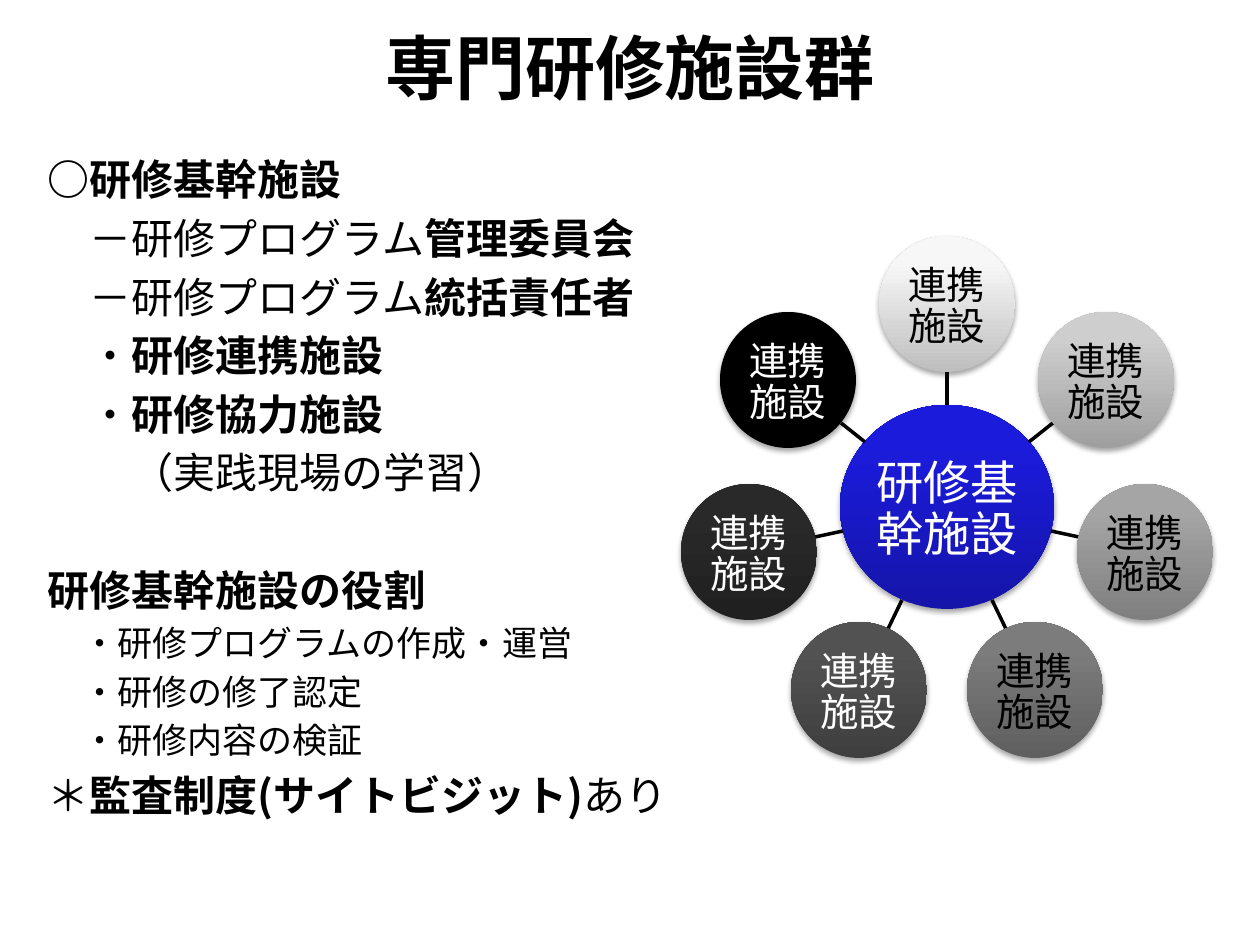
import math

from lxml import etree
from pptx import Presentation
from pptx.dml.color import RGBColor
from pptx.enum.shapes import MSO_CONNECTOR, MSO_SHAPE
from pptx.enum.text import MSO_ANCHOR, PP_ALIGN
from pptx.oxml.ns import qn
from pptx.util import Pt

PX = 914400 // 126
BLACK = RGBColor(0x00, 0x00, 0x00)
WHITE = RGBColor(0xFF, 0xFF, 0xFF)
HUB_DARK = RGBColor(0x15, 0x15, 0xA9)
HUB_LIGHT = RGBColor(0x1B, 0x1B, 0xDC)
CJK_FONT = "Noto Sans CJK JP"
SERIF_FONT = "Times New Roman"
ELLIPSE = MSO_SHAPE.OVAL
STRAIGHT = MSO_CONNECTOR.STRAIGHT
CENTER, LEFT = PP_ALIGN.CENTER, PP_ALIGN.LEFT
MIDDLE, TOP = MSO_ANCHOR.MIDDLE, MSO_ANCHOR.TOP


def write(paragraph, runs, size=24, font=CJK_FONT, color=BLACK, align=LEFT,
          pitch=None, before=0, indent=0):
    """Fill a paragraph with (text, bold) runs; indent is in px."""
    paragraph.alignment = align
    paragraph.space_before = Pt(before)
    if pitch:
        paragraph.line_spacing = Pt(pitch)
    if indent:
        paragraph._p.get_or_add_pPr().set("marL", str(indent * PX))
    for text, bold in runs:
        run = paragraph.add_run()
        run.text = text
        run.font.size, run.font.bold, run.font.name = Pt(size), bold, font
        run.font.color.rgb = color
        latin = run._r.rPr.find(qn("a:latin"))
        east_asian = etree.Element(qn("a:ea"), typeface=CJK_FONT)
        latin.addnext(east_asian)


def add_facility(cx, cy, width, height, dark, light, label, **text_format):
    """Add a shaded, shadowed circle centred on cx, cy with its label."""
    circle = slide.shapes.add_shape(
        ELLIPSE, round(cx - width / 2) * PX, round(cy - height / 2) * PX,
        width * PX, height * PX)
    circle.fill.gradient()
    circle.fill.gradient_angle = 90
    for stop, position, color in zip(circle.fill.gradient_stops, (0, 0.8), (dark, light)):
        stop.position, stop.color.rgb = position, color
    circle.line.fill.background()
    circle.shadow.inherit = False
    effects = circle._element.spPr.find(qn("a:effectLst"))
    shadow = etree.SubElement(effects, qn("a:outerShdw"), blurRad=str(Pt(3.1)),
                              dist=str(Pt(1.8)), dir="5400000", rotWithShape="0")
    shadow_color = etree.SubElement(shadow, qn("a:srgbClr"), val="000000")
    etree.SubElement(shadow_color, qn("a:alpha"), val="35000")
    frame = circle.text_frame
    frame.word_wrap, frame.vertical_anchor = True, MIDDLE
    frame.margin_left = frame.margin_right = frame.margin_bottom = 2 * PX
    frame.margin_top = 8 * PX
    write(frame.paragraphs[0], [(label, False)], font=SERIF_FONT, align=CENTER,
          **text_format)


prs = Presentation()
prs.slide_width, prs.slide_height = 1260 * PX, 945 * PX
slide = prs.slides.add_slide(prs.slide_layouts[5])

title = slide.shapes.title
title.left, title.top, title.width, title.height = 35 * PX, 16 * PX, 1190 * PX, 100 * PX
title.text_frame.vertical_anchor = MIDDLE
write(title.text_frame.paragraphs[0], [("専門研修施設群", True)], size=40, align=CENTER)

# Hub and the partner facilities spaced evenly around it, clockwise from the top
HUB_X, HUB_Y, HUB_W, HUB_H = 947, 507, 214, 204
ORBIT, PARTNER_SIZE = 203, 136
partners = [
    (0xBE, 0xF7, BLACK), (0x9F, 0xCE, BLACK), (0x7F, 0xA5, BLACK), (0x5F, 0x7C, BLACK),
    (0x3F, 0x52, WHITE), (0x20, 0x29, WHITE), (0x00, 0x00, WHITE),
]
add_facility(HUB_X, HUB_Y, HUB_W, HUB_H, HUB_DARK, HUB_LIGHT, "研修基幹施設",
             size=27, color=WHITE, pitch=29)
for index, (dark, light, text_color) in enumerate(partners):
    angle = 2 * math.pi * index / len(partners)
    dx, dy = math.sin(angle), -math.cos(angle)
    hub_edge = 1 / math.hypot(dx / (HUB_W / 2), dy / (HUB_H / 2))
    partner_edge = ORBIT - PARTNER_SIZE / 2
    ends = [round(center + reach * step) * PX
            for reach in (hub_edge, partner_edge)
            for center, step in ((HUB_X, dx), (HUB_Y, dy))]
    spoke = slide.shapes.add_connector(STRAIGHT, *ends)
    spoke.line.color.rgb, spoke.line.width = BLACK, Pt(2)
    etree.SubElement(spoke._element.spPr, qn("a:effectLst"))
    add_facility(HUB_X + ORBIT * dx, HUB_Y + ORBIT * dy, PARTNER_SIZE, PARTNER_SIZE,
                 RGBColor(dark, dark, dark), RGBColor(light, light, light), "連携施設",
                 size=22, color=text_color, pitch=23.4)

# Outline: runs, text size, indent in characters, space before
outline = [
    ([("○研修基幹施設", True)], 24, 0, 0),
    ([("－研修プログラム", False), ("管理委員会", True)], 24, 1, 4.8),
    ([("－研修プログラム", False), ("統括責任者", True)], 24, 1, 4.8),
    ([("・", False), ("研修連携施設", True)], 24, 1, 4.8),
    ([("・", False), ("研修協力施設", True)], 24, 1, 4.8),
    ([("（実践現場の学習）", False)], 24, 2, 4.8),
    ([("研修基幹施設の役割", True)], 24, 0, 38.3),
    ([("・研修プログラムの作成・運営", False)], 20, 1, 4),
    ([("・研修の修了認定", False)], 20, 1, 4),
    ([("・研修内容の検証", False)], 20, 1, 4),
    ([("＊", False), ("監査制度(サイトビジット)", True), ("あり", False)], 24, 0, 4.8),
]
body = slide.shapes.add_textbox(35 * PX, 148 * PX, 694 * PX, 760 * PX).text_frame
body.word_wrap, body.vertical_anchor = True, TOP
for number, (runs, size, indent, before) in enumerate(outline):
    paragraph = body.add_paragraph() if number else body.paragraphs[0]
    write(paragraph, runs, size=size, pitch=round(size * 1.195, 1), before=before,
          indent=round(indent * size * 1.75))

prs.save("out.pptx")
